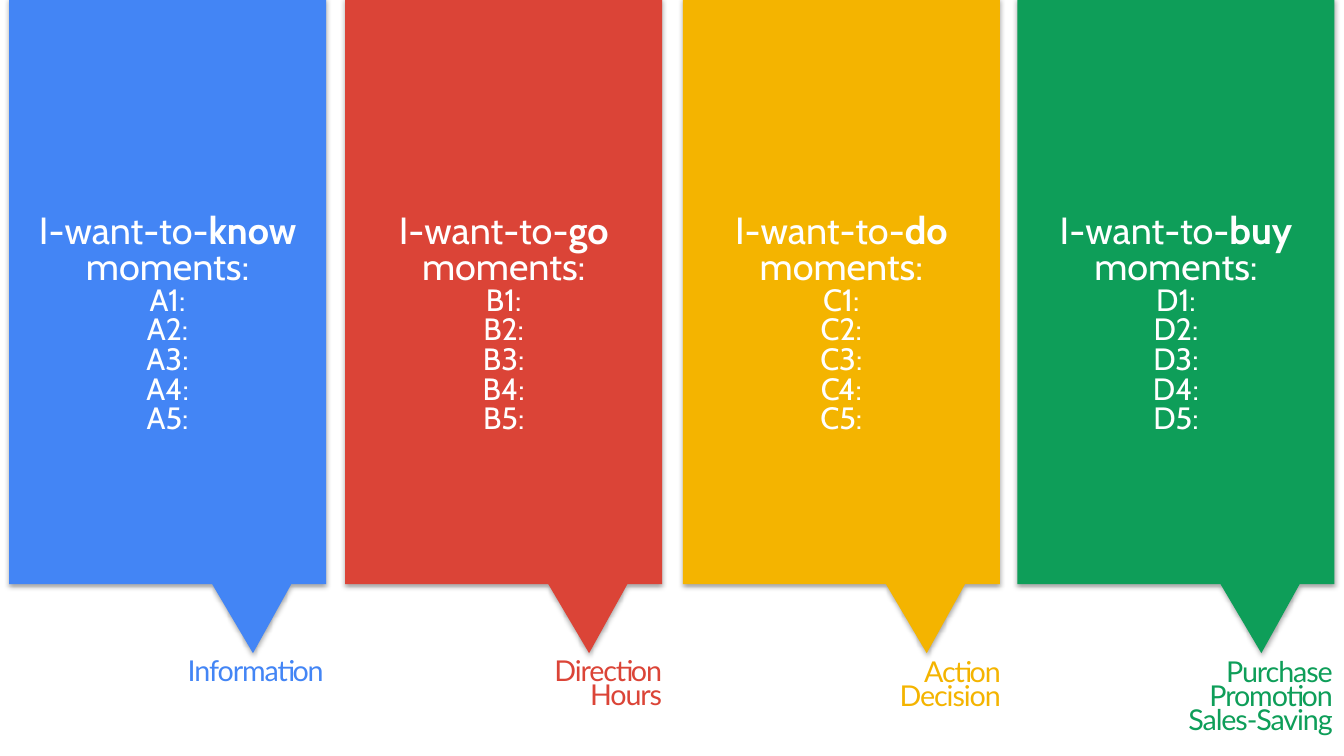
from lxml.etree import SubElement
from pptx import Presentation
from pptx.dml.color import RGBColor
from pptx.enum.text import MSO_ANCHOR as Anchor, MSO_AUTO_SIZE as AutoSize, PP_ALIGN as Align
from pptx.oxml.ns import qn
from pptx.util import Emu, Pt

PX = 9144  # EMU in one px, 100 px to the inch
INSET = 13
COLUMN_TOP = -5
# Outline of a column with its pointer, measured from the column's left edge
OUTLINE = [(629, -5), (629, 1159), (560, 1159), (484, 1296), (403, 1159), (0, 1159)]

# Column left, colour, letter, moment, label left, top and width, alignment, label
COLUMNS = [
    (685, "DB4437", "B", "go", 1084, 1300, 243, Align.RIGHT, "Direction\nHours"),
    (18, "4385F5", "A", "know", 356, 1300, 303, Align.CENTER, "Information"),
    (1355, "F4B400", "C", "do", 1770, 1302, 229, Align.RIGHT, "Action\nDecision"),
    (2019, "0E9E59", "D", "buy", 2338, 1302, 320, Align.RIGHT,
     "Purchase\nPromotion\nSales-Saving"),
]


def px(length):
    return Emu(length * PX)


def color(hex_text):
    return RGBColor.from_string(hex_text)


class SlideBuilder:
    heading_font, label_font = "Cabin", "Lato"
    heading_size, item_size, label_size = 54, 44, 41
    white = "FFFFFF"

    def __init__(self, slide):
        self.slide = slide

    def set_insets(self, frame):
        frame.margin_left = frame.margin_right = px(INSET)
        frame.margin_top = frame.margin_bottom = px(INSET)

    def format_span(self, span, font, size, hex_text, bold=False):
        span.font.name = font
        span.font.size = Pt(size)
        span.font.bold = bold
        span.font.color.rgb = color(hex_text)

    def add_shadow(self, shape):
        shape.shadow.inherit = False
        effects = shape._element.spPr.find(qn("a:effectLst"))
        shadow = SubElement(effects, qn("a:outerShdw"), blurRad=str(Pt(8)),
                            dist=str(Pt(4)), dir="5400000", algn="t", rotWithShape="0")
        shade = SubElement(shadow, qn("a:srgbClr"), val="000000")
        SubElement(shade, qn("a:alpha"), val="35000")

    def column(self, left, fill, letter, moment):
        builder = self.slide.shapes.build_freeform(left, COLUMN_TOP, scale=PX)
        builder.add_line_segments([(left + x, y) for x, y in OUTLINE], close=True)
        shape = builder.convert_to_shape()
        shape.fill.solid()
        shape.fill.fore_color.rgb = color(fill)
        shape.line.fill.background()
        self.add_shadow(shape)

        # Heading of two lines, then five numbered items
        frame = shape.text_frame
        frame.word_wrap = True
        frame.vertical_anchor = Anchor.MIDDLE
        self.set_insets(frame)
        items = [f"{letter}{number}:" for number in range(1, 6)]
        frame.text = "\n".join(["I-want-to-", "moments:"] + items)
        for index, para in enumerate(frame.paragraphs):
            para.alignment = Align.CENTER
            para.line_spacing = 0.8
            size = self.heading_size if index < 2 else self.item_size
            self.format_span(para.runs[0], self.heading_font, size, self.white)
        span = frame.paragraphs[0].add_run()
        span.text = moment
        self.format_span(span, self.heading_font, self.heading_size, self.white, bold=True)

    def label(self, left, top, width, alignment, text, hex_text):
        height = 50 + 54 * len(text.split("\n"))
        box = self.slide.shapes.add_textbox(px(left), px(top), px(width), px(height))
        frame = box.text_frame
        frame.word_wrap = False
        frame.auto_size = AutoSize.SHAPE_TO_FIT_TEXT
        self.set_insets(frame)
        frame.text = text
        for para in frame.paragraphs:
            para.alignment = alignment
            para.line_spacing = 0.7
            for span in para.runs:
                self.format_span(span, self.label_font, self.label_size, hex_text)
                span.font._element.set("spc", "-160")


def main():
    deck = Presentation()
    deck.slide_width, deck.slide_height = px(2667), px(1500)
    page = SlideBuilder(deck.slides.add_slide(deck.slide_layouts[6]))

    # Coloured columns with the labels under their pointers
    for left, fill, letter, moment, label_left, label_top, width, alignment, text in COLUMNS:
        page.column(left, fill, letter, moment)
        page.label(label_left, label_top, width, alignment, text, fill)

    deck.save("out.pptx")


if __name__ == "__main__":
    main()
